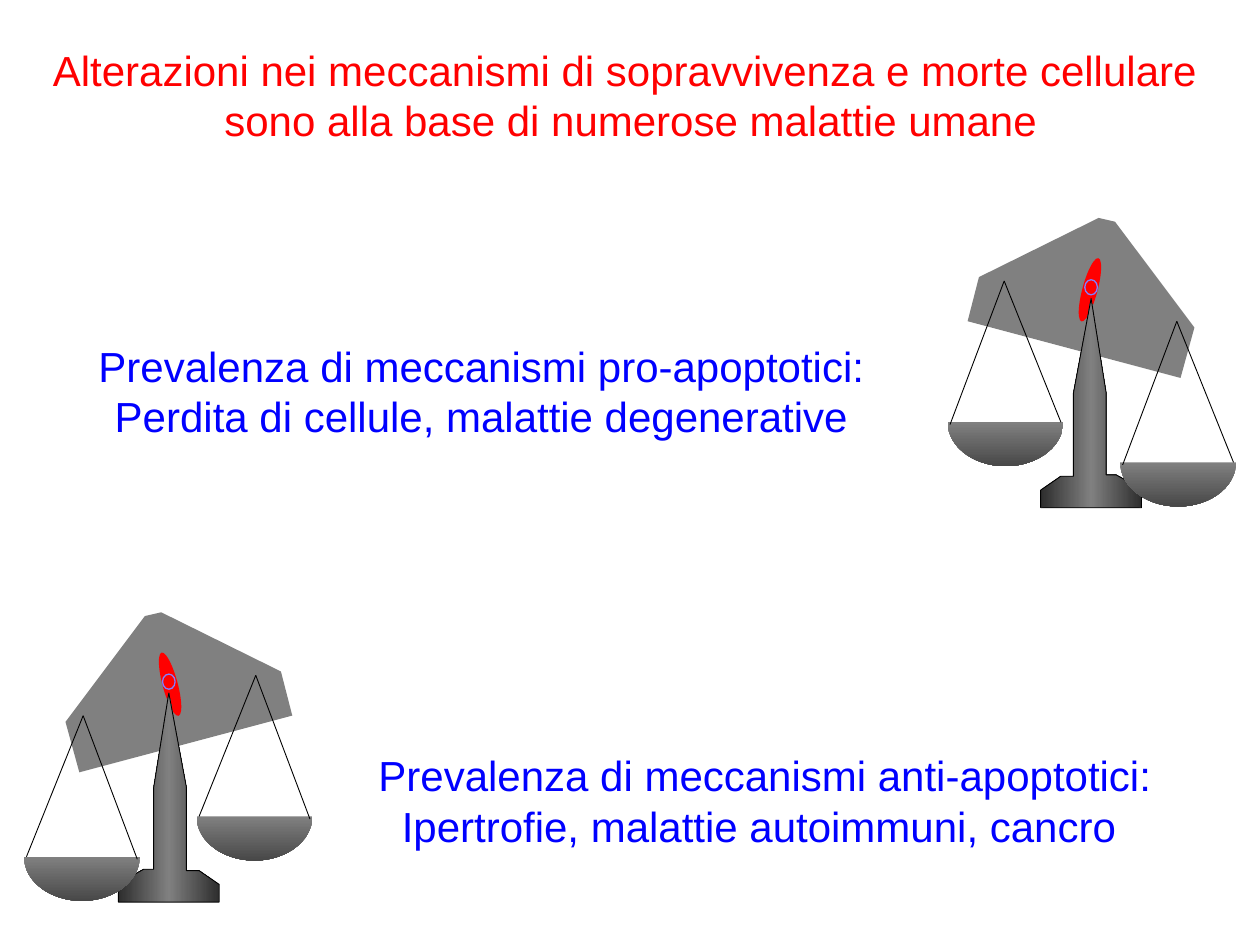
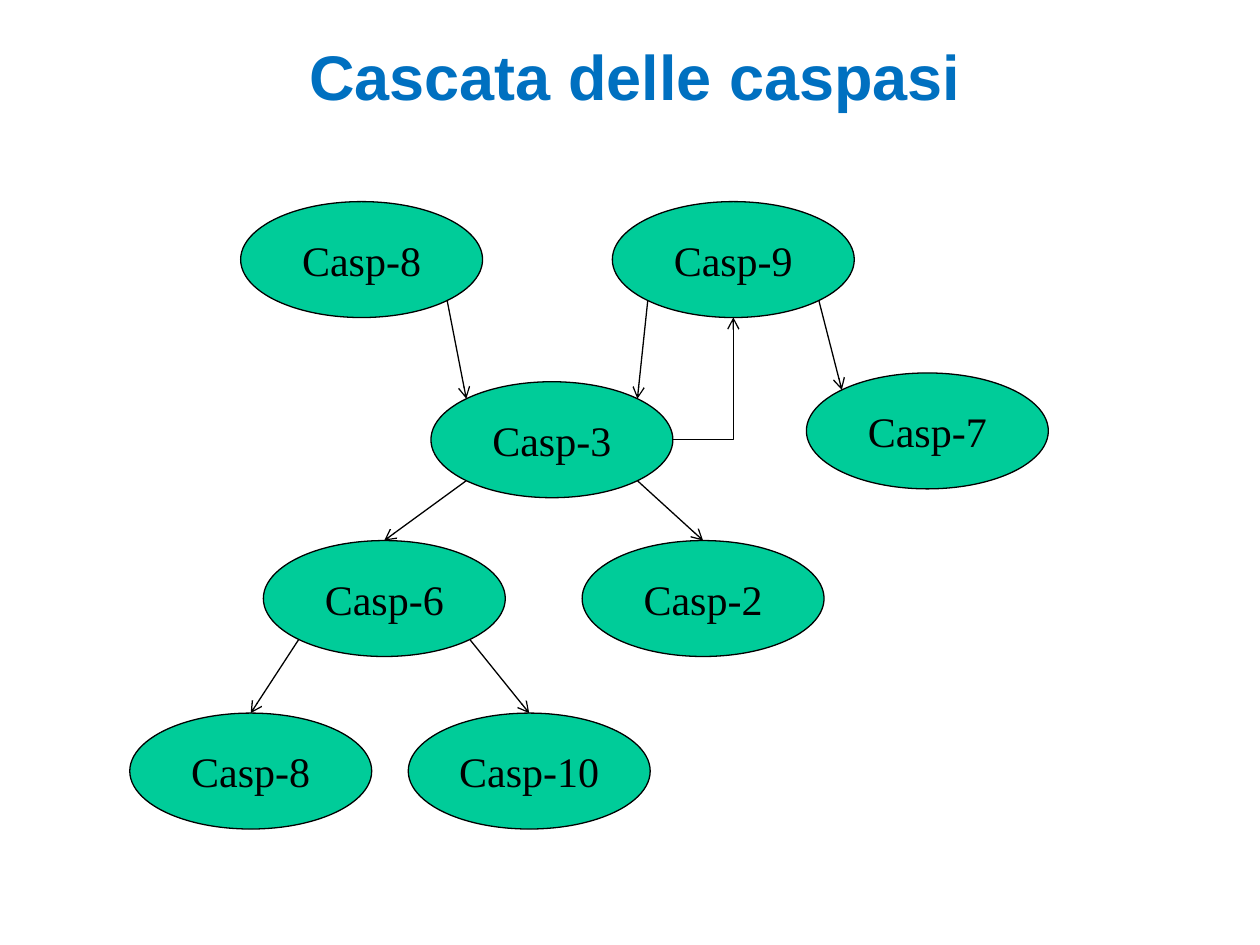
"""Build two slides: unbalanced cell-death scales and the caspase cascade."""
import math
from dataclasses import dataclass

import pptx
import pptx.dml.color
import pptx.enum.shapes
import pptx.enum.text
import pptx.oxml
import pptx.oxml.ns
import pptx.util
from lxml import etree

SHAPE = pptx.enum.shapes.MSO_SHAPE
CONNECTOR = pptx.enum.shapes.MSO_CONNECTOR
WIDTH, HEIGHT = 10, 7.5


@dataclass(frozen=True)
class Theme:
    sans: str = "Arial"
    serif: str = "Times New Roman"
    body: int = 24
    title: int = 36
    alert: str = "FF0000"
    effect: str = "0000FF"
    heading: str = "0070C0"
    node: str = "00CC99"
    ink: str = "000000"
    beam: str = "808080"
    ring: str = "8080FF"
    column: tuple = ((0, "2E2E2E"), (50, "808080"), (100, "2E2E2E"))
    pan: tuple = ((0, "808080"), (100, "484848"))
    thin: float = 0.5
    thick: float = 0.75


THEME = Theme()

SCALE_TEXTS = [
    ((2.87, 5.9, 6.4, 0.91), THEME.effect,
     ["Prevalenza di meccanismi anti-apoptotici:", "Ipertrofie, malattie autoimmuni, cancro "]),
    ((0.65, 2.65, 6.34, 0.91), THEME.effect,
     ["Prevalenza di meccanismi pro-apoptotici:", "Perdita di cellule, malattie degenerative"]),
    ((0.27, 0.3, 9.47, 0.91), THEME.alert,
     ["Alterazioni nei meccanismi di sopravvivenza e morte cellulare ",
      "sono alla base di numerose malattie umane"]),
]
BEAM = [(0.63, 6.13), (2.32, 5.68), (2.23, 5.33), (1.28, 4.86), (1.15, 4.89), (0.52, 5.73)]
COLUMN = [(1.34, 5.5), (1.22, 6.25), (1.22, 6.9), (1.14, 6.9), (0.94, 7.01), (0.94, 7.16),
          (1.74, 7.16), (1.74, 7.02), (1.58, 6.91), (1.48, 6.91), (1.48, 6.25)]
NEEDLE = (1.35, 5.43, 0.12, 0.52)
RING = (1.34, 5.41, 0.1, 0.12)
HOOKS = [(2.03, 5.36), (0.66, 5.68)]
STRINGS = [(0.43, 1.14), (-0.45, 1.12)]
PAN_RADIUS, PAN_DEPTH, PAN_DROP, PAN_STEPS = 0.46, 0.35, 1.12, 30
TILT = 15
RAISE = 3.13

CASCADE_TITLE = ["Cascata delle caspasi"]
NODE_W, NODE_H = 1.92, 0.92
NODES = {
    "start": ("Casp-8", 1.91, 1.6),
    "nine": ("Casp-9", 4.86, 1.6),
    "three": ("Casp-3", 3.42, 3.03),
    "seven": ("Casp-7", 6.4, 2.96),
    "six": ("Casp-6", 2.09, 4.29),
    "two": ("Casp-2", 4.62, 4.29),
    "eight": ("Casp-8", 1.03, 5.66),
    "ten": ("Casp-10", 3.24, 5.66),
}
DIAGONAL = math.sqrt(0.5)
SITES = {"top": (0, -1), "bottom": (0, 1), "right": (1, 0),
         "top left": (-DIAGONAL, -DIAGONAL), "top right": (DIAGONAL, -DIAGONAL),
         "bottom left": (-DIAGONAL, DIAGONAL), "bottom right": (DIAGONAL, DIAGONAL)}
ARROWS = [
    ("start", "bottom right", "three", "top left"),
    ("nine", "bottom left", "three", "top right"),
    ("nine", "bottom right", "seven", "top left"),
    ("three", "bottom left", "six", "top"),
    ("three", "bottom right", "two", "top"),
    ("six", "bottom left", "eight", "top"),
    ("six", "bottom right", "ten", "top"),
]
FEEDBACK = ("three", "right", "nine", "bottom")


def inches(*values):
    return [pptx.util.Inches(v) for v in values]


def rgb(value):
    return pptx.dml.color.RGBColor.from_string(value)


def style(sp, fill=None, line=None, weight=THEME.thin):
    sp.shadow.inherit = False
    if fill:
        sp.fill.solid()
        sp.fill.fore_color.rgb = rgb(fill)
    else:
        sp.fill.background()
    if line:
        sp.line.color.rgb = rgb(line)
        sp.line.width = pptx.util.Pt(weight)
    else:
        sp.line.fill.background()


def set_gradient(sp, stops, angle):
    qn = pptx.oxml.ns.qn
    sp.fill.gradient()
    grad = sp._element.spPr.find(qn("a:gradFill"))
    gs_list = grad.find(qn("a:gsLst"))
    for gs in list(gs_list):
        gs_list.remove(gs)
    for pos, color in stops:
        gs = etree.SubElement(gs_list, qn("a:gs"), pos=str(pos * 1000))
        etree.SubElement(gs, qn("a:srgbClr"), val=color)
    grad.find(qn("a:lin")).set("ang", str(angle * 60000))


def write(sp, lines, size, font, color, bold=False):
    tf = sp.text_frame
    tf.text = "\n".join(lines)
    tf.word_wrap = False
    for p in tf.paragraphs:
        p.alignment = pptx.enum.text.PP_ALIGN.CENTER
        for r in p.runs:
            r.font.size = pptx.util.Pt(size)
            r.font.name = font
            r.font.bold = bold
            r.font.color.rgb = rgb(color)
    return tf


def add_text(s, box, lines, size, color, bold=False):
    sp = s.shapes.add_textbox(*inches(*box))
    tf = write(sp, lines, size, THEME.sans, color, bold)
    tf.auto_size = pptx.enum.text.MSO_AUTO_SIZE.SHAPE_TO_FIT_TEXT


def add_line(shapes, start, end, weight, kind=CONNECTOR.STRAIGHT, arrow=False):
    qn = pptx.oxml.ns.qn
    sp = shapes.add_connector(kind, *inches(*start, *end))
    sp.line.color.rgb = rgb(THEME.ink)
    sp.line.width = pptx.util.Pt(weight)
    if arrow:
        etree.SubElement(sp.line._get_or_add_ln(), qn("a:tailEnd"), type="arrow")
    etree.SubElement(sp._element.spPr, qn("a:effectLst"))
    return sp


def add_outline(shapes, points):
    points = [inches(*point) for point in points]
    builder = shapes.build_freeform(*points[0], scale=1.0)
    builder.add_line_segments(points[1:], close=True)
    return builder.convert_to_shape()


def add_oval(shapes, center, width, height):
    x, y = center
    return shapes.add_shape(SHAPE.OVAL, *inches(x - width / 2, y - height / 2, width, height))


def add_scale(s, mirrored=False):
    shapes = s.shapes.add_group_shape().shapes

    def place(x, y):
        return (WIDTH - x, y - RAISE) if mirrored else (x, y)

    style(add_outline(shapes, [place(*point) for point in BEAM]), THEME.beam)
    needle = add_oval(shapes, place(*NEEDLE[:2]), *NEEDLE[2:])
    needle.rotation = TILT if mirrored else 360 - TILT
    style(needle, THEME.alert)
    style(add_oval(shapes, place(*RING[:2]), *RING[2:]), line=THEME.ring, weight=THEME.thick)
    column = add_outline(shapes, [place(*point) for point in COLUMN])
    style(column, line=THEME.ink)
    set_gradient(column, THEME.column, 0)
    for x, y in HOOKS:
        angles = [math.pi * i / PAN_STEPS for i in range(PAN_STEPS + 1)]
        rim = [place(x - 0.01 + PAN_RADIUS * math.cos(a),
                     y + PAN_DROP + PAN_DEPTH * math.sin(a)) for a in angles]
        pan = add_outline(shapes, rim)
        style(pan)
        set_gradient(pan, THEME.pan, 90)
        for dx, dy in STRINGS:
            add_line(shapes, place(x, y), place(x + dx, y + dy), THEME.thin)


def site(node, name):
    _, left, top = NODES[node]
    dx, dy = SITES[name]
    return left + NODE_W / 2 * (1 + dx), top + NODE_H / 2 * (1 + dy)


def build_scales(s):
    add_scale(s)
    add_scale(s, mirrored=True)
    for box, color, lines in SCALE_TEXTS:
        add_text(s, box, lines, THEME.body, color)


def build_cascade(s):
    add_text(s, (2.33, 0.25, 5.42, 0.71), CASCADE_TITLE, THEME.title, THEME.heading, bold=True)
    ovals = {}
    for key, (label, left, top) in NODES.items():
        sp = s.shapes.add_shape(SHAPE.OVAL, *inches(left, top, NODE_W, NODE_H))
        style(sp, THEME.node, THEME.ink, THEME.thick)
        tf = write(sp, [label], THEME.body, THEME.serif, THEME.ink)
        tf.vertical_anchor = pptx.enum.text.MSO_ANCHOR.MIDDLE
        ovals[key] = sp
    for source, leave, target, enter in ARROWS:
        sp = add_line(s.shapes, site(source, leave), site(target, enter), THEME.thick, arrow=True)
        if enter == "top":
            sp.end_connect(ovals[target], 0)
    source, leave, target, enter = FEEDBACK
    sp = add_line(s.shapes, site(source, leave), site(target, enter), THEME.thick,
                  CONNECTOR.ELBOW, arrow=True)
    sp._element.spPr.find(pptx.oxml.ns.qn("a:prstGeom")).set("prst", "bentConnector2")


def main():
    prs = pptx.Presentation()
    prs.slide_width, prs.slide_height = inches(WIDTH, HEIGHT)
    for build in (build_scales, build_cascade):
        build(prs.slides.add_slide(prs.slide_layouts[6]))
    prs.save("out.pptx")


if __name__ == "__main__":
    main()
